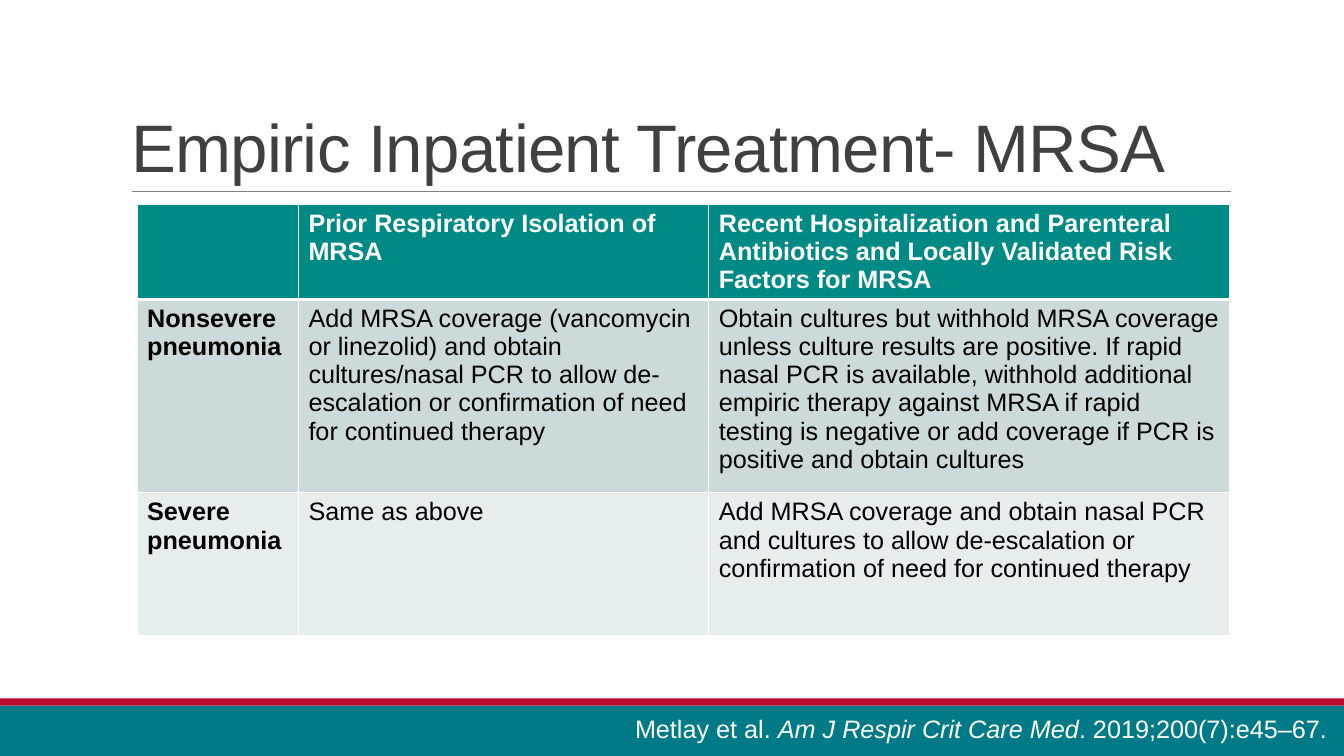
"""Build the slide on empiric inpatient treatment for MRSA."""
from dataclasses import dataclass

import pptx
import pptx.dml.color
import pptx.enum.shapes
import pptx.enum.text
import pptx.oxml.ns
import pptx.util
from lxml import etree
from pptx.util import Inches


@dataclass(frozen=True)
class Theme:
    """Colours, font and type sizes of the slide."""
    font: str = "Arial"
    title_size: float = 48
    text_size: float = 18
    title: str = "404040"
    text: str = "000000"
    white: str = "FFFFFF"
    footer: str = "007A86"
    stripe: str = "BA0C2F"
    rule: str = "808080"
    row_fills: tuple = ("008A86", "CCDAD9", "E7EDED")


THEME = Theme()
COLUMN_WIDTHS = (1.6, 4.07, 5.17)
ROW_HEIGHTS = (0.93, 1.92, 1.42)
TREATMENTS = (
    ("", "Prior Respiratory Isolation of MRSA",
     "Recent Hospitalization and Parenteral Antibiotics and Locally Validated "
     "Risk Factors for MRSA"),
    ("Nonsevere pneumonia",
     "Add MRSA coverage (vancomycin or linezolid) and obtain cultures/nasal PCR "
     "to allow de-escalation or confirmation of need for continued therapy",
     "Obtain cultures but withhold MRSA coverage unless culture results are "
     "positive. If rapid nasal PCR is available, withhold additional empiric "
     "therapy against MRSA if rapid testing is negative or add coverage if PCR "
     "is positive and obtain cultures"),
    ("Severe pneumonia", "Same as above",
     "Add MRSA coverage and obtain nasal PCR and cultures to allow de-escalation "
     "or confirmation of need for continued therapy"),
)


def rgb(value):
    """Turn a hex string into a colour."""
    return pptx.dml.color.RGBColor.from_string(value)


def add_span(para, text, size=THEME.text_size, color=THEME.text,
             bold=False, italic=False, spacing=None):
    """Add formatted text to a paragraph."""
    span = para.add_run()
    span.text = text
    span.font.name = THEME.font
    span.font.size = pptx.util.Pt(size)
    span.font.color.rgb = rgb(color)
    span.font.bold = bold
    span.font.italic = italic
    if spacing is not None:
        span.font._element.set("spc", str(round(spacing * 100)))


def add_bar(page, top, height, color):
    """Add a plain bar across the full width of the slide."""
    bar = page.shapes.add_shape(pptx.enum.shapes.MSO_SHAPE.RECTANGLE,
                                0, Inches(top), Inches(13.33), Inches(height))
    bar.shadow.inherit = False
    bar.fill.solid()
    bar.fill.fore_color.rgb = rgb(color)
    bar.line.fill.background()


def add_rule(page, left, right, top):
    """Add the thin horizontal rule under the title."""
    rule = page.shapes.add_connector(pptx.enum.shapes.MSO_CONNECTOR.STRAIGHT,
                                     Inches(left), Inches(top), Inches(right), Inches(top))
    rule.line.color.rgb = rgb(THEME.rule)
    rule.line.width = pptx.util.Pt(0.5)
    etree.SubElement(rule._element.spPr, pptx.oxml.ns.qn("a:effectLst"))


def set_title(page, text):
    """Place and format the title placeholder."""
    title = page.shapes.title
    title.left, title.top = Inches(1.2), Inches(0.31)
    title.width, title.height = Inches(11), Inches(1.59)
    frame = title.text_frame
    frame.auto_size = pptx.enum.text.MSO_AUTO_SIZE.NONE
    frame.vertical_anchor = pptx.enum.text.MSO_ANCHOR.BOTTOM
    para = frame.paragraphs[0]
    para.alignment = pptx.enum.text.PP_ALIGN.LEFT
    para.line_spacing = 0.85
    add_span(para, text, size=THEME.title_size, color=THEME.title, spacing=-0.5)


def set_borders(cell, **widths):
    """Draw white cell borders with the given widths in points."""
    qn = pptx.oxml.ns.qn
    properties = cell._tc.get_or_add_tcPr()
    for side in "LRTB":
        width = pptx.util.Pt(widths.get(side, 1))
        line = etree.SubElement(properties, qn(f"a:ln{side}"), w=str(width))
        fill = etree.SubElement(line, qn("a:solidFill"))
        etree.SubElement(fill, qn("a:srgbClr"), val=THEME.white)


def fill_cell(cell, text, row, column):
    """Format one table cell and write its text."""
    set_borders(cell, T=3 if row == 1 else 1, B=3 if row == 0 else 1)
    cell.fill.solid()
    cell.fill.fore_color.rgb = rgb(THEME.row_fills[row])
    if text:
        add_span(cell.text_frame.paragraphs[0], text,
                 color=THEME.white if row == 0 else THEME.text,
                 bold=row == 0 or column == 0)


def add_treatment_table(page):
    """Add the table of treatments by severity and risk."""
    table = page.shapes.add_table(
        len(ROW_HEIGHTS), len(COLUMN_WIDTHS), Inches(1.36), Inches(2.03),
        Inches(sum(COLUMN_WIDTHS)), Inches(sum(ROW_HEIGHTS))).table
    for column, width in zip(table.columns, COLUMN_WIDTHS):
        column.width = Inches(width)
    for row, height in zip(table.rows, ROW_HEIGHTS):
        row.height = Inches(height)
    for row, texts in enumerate(TREATMENTS):
        for column, text in enumerate(texts):
            fill_cell(table.cell(row, column), text, row, column)


def add_citation(page):
    """Add the journal citation over the footer bar."""
    box = page.shapes.add_textbox(Inches(6.2), Inches(7.03), Inches(7.13), Inches(0.4))
    frame = box.text_frame
    frame.word_wrap = True
    frame.auto_size = pptx.enum.text.MSO_AUTO_SIZE.SHAPE_TO_FIT_TEXT
    para = frame.paragraphs[0]
    add_span(para, "Metlay et al. ", color=THEME.white)
    add_span(para, "Am J Respir Crit Care Med", color=THEME.white, italic=True)
    add_span(para, ". 2019;200(7):e45–67.", color=THEME.white)


def main():
    """Build and save the deck."""
    deck = pptx.Presentation()
    deck.slide_width, deck.slide_height = Inches(13.33), Inches(7.5)
    page = deck.slides.add_slide(deck.slide_layouts.get_by_name("Title Only"))
    add_bar(page, 7, 0.5, THEME.footer)
    add_bar(page, 6.93, 0.07, THEME.stripe)
    add_rule(page, 1.31, 12.21, 1.9)
    set_title(page, "Empiric Inpatient Treatment- MRSA")
    add_treatment_table(page)
    add_citation(page)
    deck.save("out.pptx")


if __name__ == "__main__":
    main()
